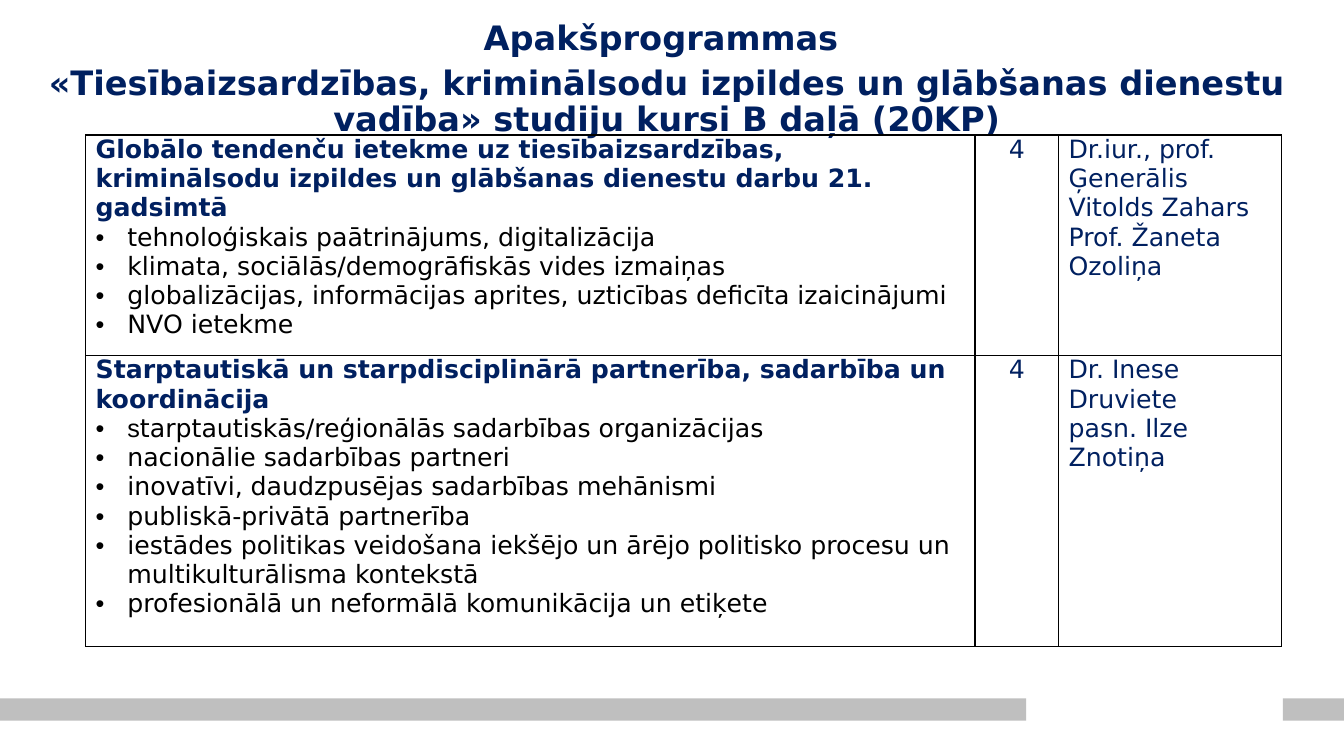
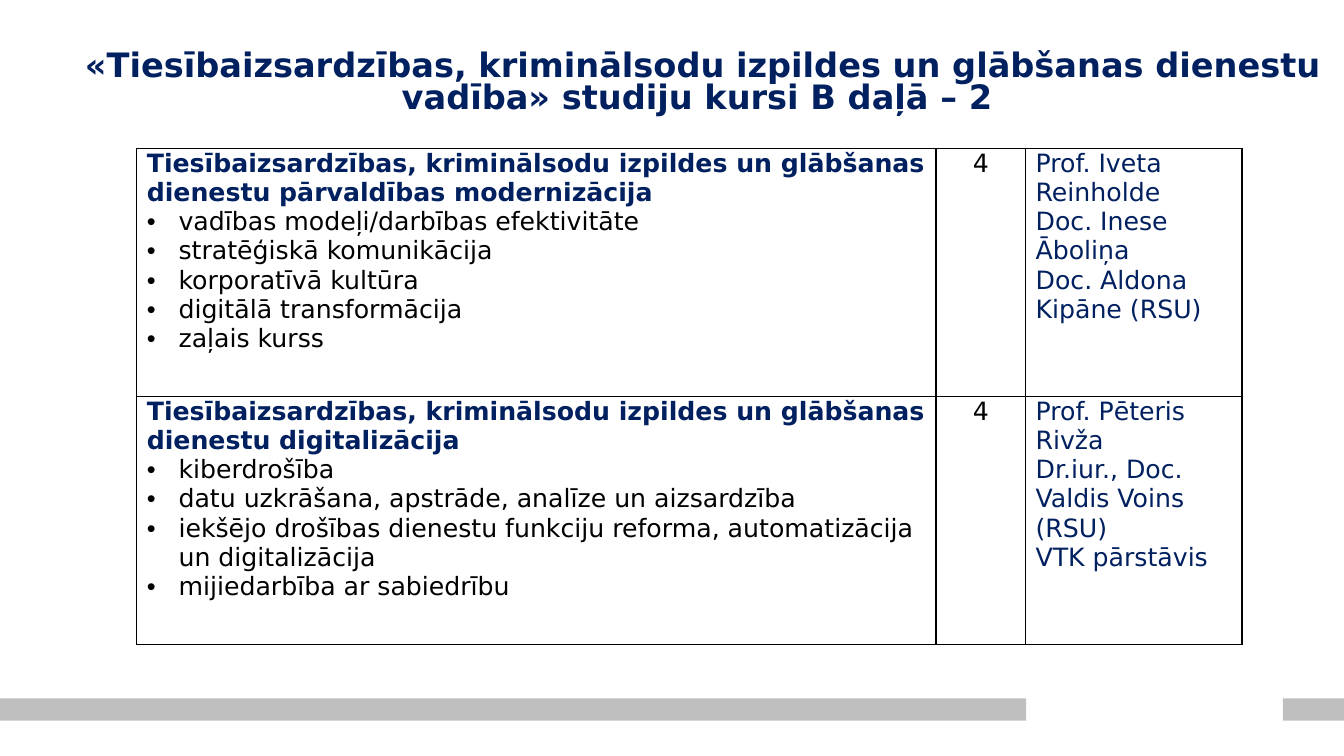
from lxml import etree
from pptx import Presentation
from pptx import util as u
from pptx.dml.color import RGBColor
from pptx.enum import shapes, text
from pptx.oxml import ns

COLORS = {"navy": "002060", "black": "000000", "band": "BFBFBF"}
FONT = "DejaVu Sans"
TITLE_SIZE, BODY_SIZE = 24, 18
BAND_TOP, BAND_HEIGHT = 17.6, 0.56
BANDS = [(0, 25.86), (32.33, 1.54)]
BULLET_INDENT = u.Cm(0.8)
CELL_MARGIN = u.Cm(0.25)

SLIDES = [
    {
        "title": [
            "Apakšprogrammas ",
            "«Tiesībaizsardzības, kriminālsodu izpildes un glābšanas dienestu "
            "vadība» studiju kursi B daļā (20KP)",
        ],
        "title_box": (0.89, 0.41, 31.83, 3.0),
        "title_spacing": 0.9,
        "table_at": (2.16, 3.4),
        "columns": (22.41, 2.11, 5.62),
        "rows": (5.56, 7.34),
        "credits_color": "navy",
        "courses": [
            {
                "name": "Globālo tendenču ietekme uz tiesībaizsardzības, kriminālsodu "
                        "izpildes un glābšanas dienestu darbu 21. gadsimtā",
                "topics": [
                    "tehnoloģiskais paātrinājums, digitalizācija",
                    "klimata, sociālās/demogrāfiskās vides izmaiņas",
                    "globalizācijas, informācijas aprites, uzticības deficīta izaicinājumi",
                    "NVO ietekme",
                ],
                "credits": "4",
                "lecturers": ["Dr.iur., prof. Ģenerālis Vitolds Zahars", "Prof. Žaneta Ozoliņa"],
            },
            {
                "name": "Starptautiskā un starpdisciplinārā partnerība, sadarbība un koordinācija",
                "topics": [
                    [("s", "Arial"), ("tarptautiskās/reģionālās sadarbības organizācijas", FONT)],
                    "nacionālie sadarbības partneri",
                    "inovatīvi, daudzpusējas sadarbības mehānismi",
                    "publiskā-privātā partnerība",
                    "iestādes politikas veidošana iekšējo un ārējo politisko procesu un "
                    "multikulturālisma kontekstā",
                    "profesionālā un neformālā komunikācija un etiķete",
                ],
                "credits": "4",
                "lecturers": ["Dr. Inese Druviete", "pasn. Ilze Znotiņa"],
            },
        ],
    },
    {
        "title": [
            "«Tiesībaizsardzības, kriminālsodu izpildes un glābšanas dienestu "
            "vadība» studiju kursi B daļā – 2 ",
        ],
        "title_box": (1.7, 1.17, 32.03, 2.3),
        "title_spacing": 0.8,
        "table_at": (3.45, 3.75),
        "columns": (20.14, 2.26, 5.45),
        "rows": (6.25, 6.25),
        "credits_color": "black",
        "courses": [
            {
                "name": "Tiesībaizsardzības, kriminālsodu izpildes un glābšanas dienestu "
                        "pārvaldības modernizācija",
                "topics": [
                    "vadības modeļi/darbības efektivitāte",
                    "stratēģiskā komunikācija",
                    "korporatīvā kultūra",
                    "digitālā transformācija",
                    "zaļais kurss",
                ],
                "credits": "4",
                "lecturers": ["Prof. Iveta Reinholde", "Doc. Inese Āboliņa",
                              "Doc. Aldona Kipāne (RSU)"],
            },
            {
                "name": "Tiesībaizsardzības, kriminālsodu izpildes un glābšanas dienestu "
                        "digitalizācija",
                "topics": [
                    "kiberdrošība",
                    "datu uzkrāšana, apstrāde, analīze un aizsardzība",
                    "iekšējo drošības dienestu funkciju reforma, automatizācija un digitalizācija",
                    "mijiedarbība ar sabiedrību",
                ],
                "credits": "4",
                "lecturers": ["Prof. Pēteris Rivža", "Dr.iur., Doc. Valdis Voins (RSU)",
                              "VTK pārstāvis"],
            },
        ],
    },
]


def rgb(name):
    return RGBColor.from_string(COLORS[name])


def add_bullet(paragraph):
    props = paragraph._p.get_or_add_pPr()
    props.set("marL", str(BULLET_INDENT))
    props.set("indent", str(-BULLET_INDENT))
    etree.SubElement(props, ns.qn("a:buFont")).set("typeface", "Arial")
    etree.SubElement(props, ns.qn("a:buChar")).set("char", "•")


def write(frame, lines, size, color, bold=False, bullet=False, align=text.PP_ALIGN.LEFT):
    written = []
    for line in lines:
        first = frame.paragraphs[0]
        paragraph = frame.add_paragraph() if first.runs else first
        paragraph.alignment = align
        if bullet:
            add_bullet(paragraph)
        for words, face in [(line, FONT)] if isinstance(line, str) else line:
            run = paragraph.add_run()
            run.text = words
            run.font.name = face
            run.font.size = u.Pt(size)
            run.font.bold = bold
            run.font.color.rgb = rgb(color)
        written.append(paragraph)
    return written


def add_bands(slide):
    for left, width in BANDS:
        band = slide.shapes.add_shape(
            shapes.MSO_SHAPE.RECTANGLE,
            u.Cm(left), u.Cm(BAND_TOP), u.Cm(width), u.Cm(BAND_HEIGHT))
        band.shadow.inherit = False
        band.fill.solid()
        band.fill.fore_color.rgb = rgb("band")
        band.line.fill.background()


def add_title(slide, content):
    frame = slide.shapes.add_textbox(*map(u.Cm, content["title_box"])).text_frame
    frame.word_wrap = True
    frame.vertical_anchor = text.MSO_ANCHOR.TOP
    frame.margin_left = frame.margin_right = u.Cm(0.13)
    frame.margin_top = frame.margin_bottom = u.Cm(0.13)
    for paragraph in write(frame, content["title"], TITLE_SIZE, "navy", bold=True,
                           align=text.PP_ALIGN.CENTER):
        paragraph.line_spacing = content["title_spacing"]
        paragraph.space_after = u.Pt(6)


def style_cell(cell):
    cell.margin_left = cell.margin_right = CELL_MARGIN
    cell.margin_top = cell.margin_bottom = 0
    cell.fill.background()
    props = cell._tc.get_or_add_tcPr()
    for position, side in enumerate(("lnL", "lnR", "lnT", "lnB")):
        border = etree.Element(ns.qn(f"a:{side}"), w=str(u.Pt(1)))
        fill = etree.SubElement(border, ns.qn("a:solidFill"))
        etree.SubElement(fill, ns.qn("a:srgbClr")).set("val", COLORS["black"])
        props.insert(position, border)


def add_courses(slide, content):
    columns, rows = content["columns"], content["rows"]
    left, top = content["table_at"]
    table = slide.shapes.add_table(
        len(rows), len(columns), u.Cm(left), u.Cm(top),
        u.Cm(sum(columns)), u.Cm(sum(rows))).table
    table.first_row = table.horz_banding = False
    for column, width in zip(table.columns, columns):
        column.width = u.Cm(width)
    for row, height, course in zip(table.rows, rows, content["courses"]):
        row.height = u.Cm(height)
        for cell in row.cells:
            style_cell(cell)
        subject, points, lecturers = (cell.text_frame for cell in row.cells)
        write(subject, [course["name"]], BODY_SIZE, "navy", bold=True)
        write(subject, course["topics"], BODY_SIZE, "black", bullet=True)
        write(points, [course["credits"]], BODY_SIZE, content["credits_color"],
              align=text.PP_ALIGN.CENTER)
        write(lecturers, course["lecturers"], BODY_SIZE, "navy")


def main():
    deck = Presentation()
    deck.slide_width, deck.slide_height = u.Cm(33.87), u.Cm(19.05)
    for content in SLIDES:
        slide = deck.slides.add_slide(deck.slide_layouts[6])
        add_bands(slide)
        add_title(slide, content)
        add_courses(slide, content)
    deck.save("out.pptx")


if __name__ == "__main__":
    main()
